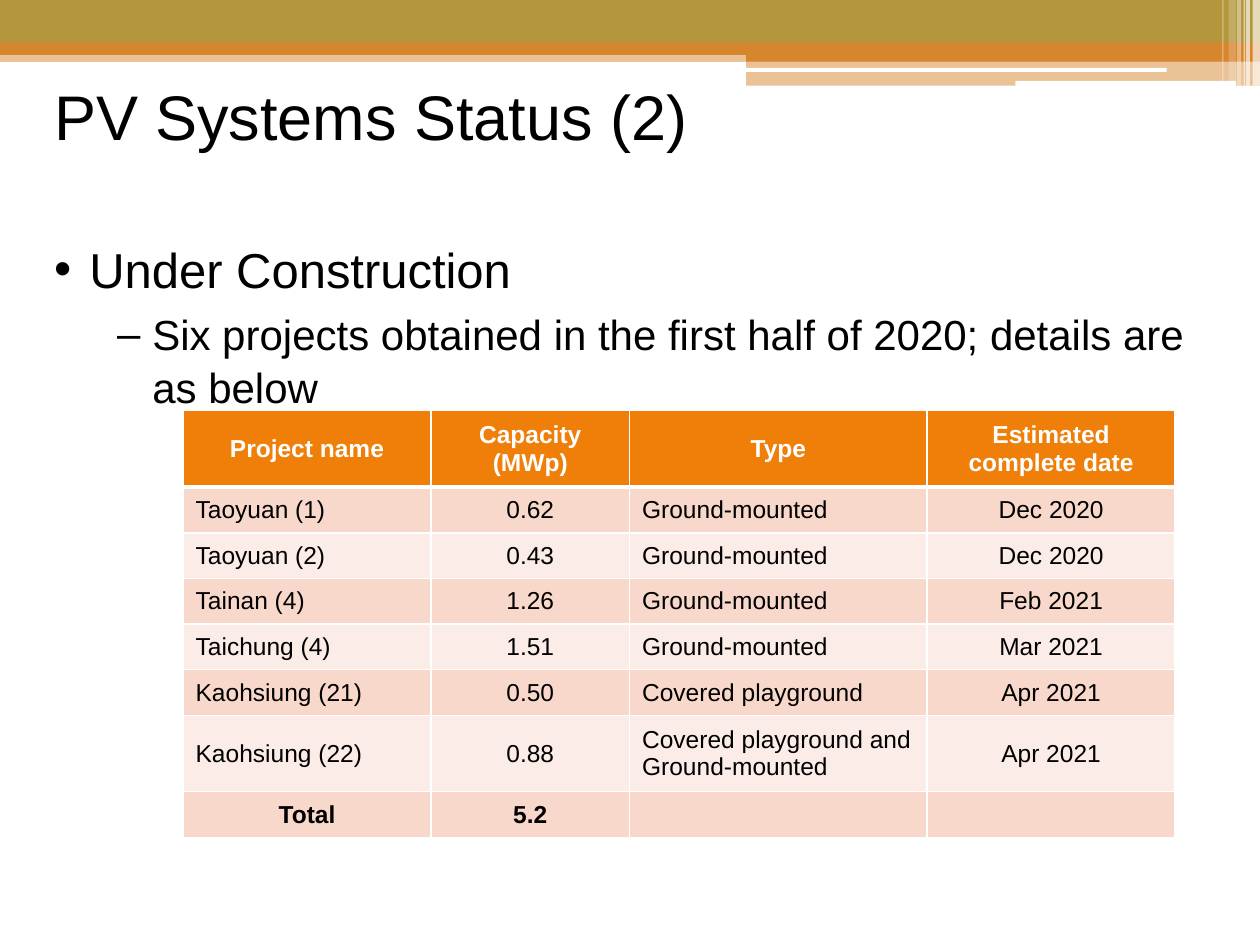
from dataclasses import dataclass
from lxml.etree import SubElement as Sub
from pptx import Presentation
from pptx.dml.color import RGBColor as RGB
from pptx.enum.shapes import MSO_SHAPE as Shape
from pptx.enum.text import MSO_ANCHOR as Anchor, MSO_AUTO_SIZE as Fit, PP_ALIGN as Align
from pptx.oxml.ns import qn
from pptx.util import Cm, Pt


@dataclass(frozen=True)
class Theme:
    face: str = "Arial"
    ink: str = "000000"
    white: str = "FFFFFF"
    olive: str = "B4963C"
    amber: str = "D6862D"
    head: str = "F07F09"
    odd: str = "F9D8CC"
    even: str = "FCECE7"
    title: int = 36
    item: int = 28
    sub: int = 24
    cell: int = 14


LOOK = Theme()

BANDS = [
    (0, 1.02, 25.4, 0.23, LOOK.amber, 50),
    (0, 0, 25.4, 0.88, LOOK.olive, 100),
    (0, 0.86, 25.4, 0.25, LOOK.amber, 100),
    (15.04, 0.99, 10.36, 0.25, LOOK.amber, 100),
    (15.04, 1.22, 10.36, 0.51, LOOK.amber, 50),
]
BARS = [(15.01, 1.37, 8.51, 0.08), (20.47, 1.63, 4.45, 0.1)]
STRIPS = [
    (25.25, 0.15, 1.73, 65),
    (25.12, 0.08, 1.73, 65),
    (25.07, 0.03, 1.73, 60),
    (24.94, 0.08, 1.73, 40),
    (24.77, 0.15, 1.63, 20),
    (24.64, 0.03, 1.63, 30),
]
ITEMS = [
    ("Under Construction", "•", LOOK.item, 0.71, 0),
    ("Six projects obtained in the first half of 2020; details are as below",
     "–", LOOK.sub, 1.98, 4.8),
]
ROWS = [
    ("Project name", "Capacity\v(MWp)", "Type", "Estimated complete date"),
    ("Taoyuan (1)", "0.62", "Ground-mounted", "Dec 2020"),
    ("Taoyuan (2)", "0.43", "Ground-mounted", "Dec 2020"),
    ("Tainan (4)", "1.26", "Ground-mounted", "Feb 2021"),
    ("Taichung (4)", "1.51", "Ground-mounted", "Mar 2021"),
    ("Kaohsiung (21)", "0.50", "Covered playground", "Apr 2021"),
    ("Kaohsiung (22)", "0.88", "Covered playground and Ground-mounted", "Apr 2021"),
    ("Total", "5.2", "", ""),
]
COLS = (5, 4, 6, 5)
TALL, LOW = 1.54, 0.92


def apply(part, form):
    for key, val in form.items():
        setattr(part, key, val)


def style(para, size, hue=LOOK.ink, bold=False):
    for run in para.runs:
        apply(run.font, {"name": LOOK.face, "size": Pt(size), "bold": bold})
        run.font.color.rgb = RGB.from_string(hue)


def block(slide, box, kind, hue, clear=100):
    part = slide.shapes.add_shape(kind, *map(Cm, box))
    part.shadow.inherit = False
    part.line.fill.background()
    part.fill.solid()
    part.fill.fore_color.rgb = RGB.from_string(hue)
    if clear < 100:
        tint = part.fill._xPr.find(qn("a:solidFill"))[0]
        Sub(tint, qn("a:alpha"), val=str(clear * 1000))
    return part


def banner(slide, left, top):
    for x, y, wide, high, hue, clear in BANDS:
        block(slide, (left + x, top + y, wide, high), Shape.RECTANGLE, hue, clear)
    for x, y, wide, high in BARS:
        bar = block(slide, (left + x, top + y, wide, high),
                    Shape.ROUNDED_RECTANGLE, LOOK.white)
        bar.adjustments[0] = 0.167
    for x, wide, high, clear in STRIPS:
        block(slide, (left + x, top, wide, high), Shape.RECTANGLE, LOOK.white, clear)


def place(slide, holder, box):
    slide.shapes.element.append(holder.element)
    apply(holder, dict(zip(("left", "top", "width", "height"), map(Cm, box))))
    form = dict.fromkeys(("margin_left", "margin_top", "margin_right", "margin_bottom"), 0)
    form |= {"word_wrap": True, "auto_size": Fit.NONE, "vertical_anchor": Anchor.TOP}
    apply(holder.text_frame, form)
    return holder.text_frame


def title(slide, box):
    frame = place(slide, slide.shapes.title, box)
    frame.text = "PV Systems Status (2)"
    para = frame.paragraphs[0]
    para.alignment = Align.LEFT
    style(para, LOOK.title)


def body(slide, box):
    frame = place(slide, slide.placeholders[1], box)
    frame.text = "\n".join(item[0] for item in ITEMS)
    for level, (para, item) in enumerate(zip(frame.paragraphs, ITEMS)):
        _, mark, size, left, gap = item
        props = para._p.get_or_add_pPr()
        props.set("marL", str(Cm(left)))
        props.set("indent", str(Cm(-0.71)))
        Sub(props, qn("a:buFont"), typeface=LOOK.face)
        Sub(props, qn("a:buChar"), char=mark)
        apply(para, {"level": level, "line_spacing": 1.05, "space_before": Pt(gap)})
        style(para, size)


def border(cell, row):
    props = cell._tc.get_or_add_tcPr()
    wide = {"L": 1, "R": 1, "T": 3 if row == 1 else 1, "B": 3 if row == 0 else 1}
    for side, size in wide.items():
        line = Sub(props, qn(f"a:ln{side}"), w=str(Pt(size)))
        Sub(Sub(line, qn("a:solidFill")), qn("a:srgbClr"), val=LOOK.white)


def table(slide, left, top):
    last = len(ROWS) - 1
    highs = [TALL if row in (0, last - 1) else LOW for row in range(len(ROWS))]
    box = (left, top, sum(COLS), sum(highs))
    grid = slide.shapes.add_table(len(ROWS), len(COLS), *map(Cm, box)).table
    grid.horz_banding = False
    for col, wide in zip(grid.columns, COLS):
        col.width = Cm(wide)
    for row, (texts, high) in enumerate(zip(ROWS, highs)):
        grid.rows[row].height = Cm(high)
        for col, text in enumerate(texts):
            cell = grid.cell(row, col)
            border(cell, row)
            cell.fill.solid()
            fill = LOOK.head if row == 0 else LOOK.odd if row % 2 else LOOK.even
            cell.fill.fore_color.rgb = RGB.from_string(fill)
            cell.vertical_anchor = Anchor.MIDDLE
            if text:
                cell.text_frame.text = text
            para = cell.text_frame.paragraphs[0]
            mid = row in (0, last) or col in (1, 3)
            para.alignment = Align.CENTER if mid else Align.LEFT
            style(para, LOOK.cell, LOOK.ink if row else LOOK.white, row in (0, last))
            if not text:
                Sub(para._p, qn("a:endParaRPr"), sz=str(LOOK.cell * 100))


def main():
    deck = Presentation()
    apply(deck, {"slide_width": Cm(25.4), "slide_height": Cm(19.05)})
    slide = deck.slides.add_slide(deck.slide_layouts[1])
    banner(slide, 0, 0)
    title(slide, (1.09, 1.57, 23.22, 2.54))
    body(slide, (1.09, 4.76, 23.22, 12.17))
    table(slide, 3.69, 8.28)
    deck.save("out.pptx")


if __name__ == "__main__":
    main()
